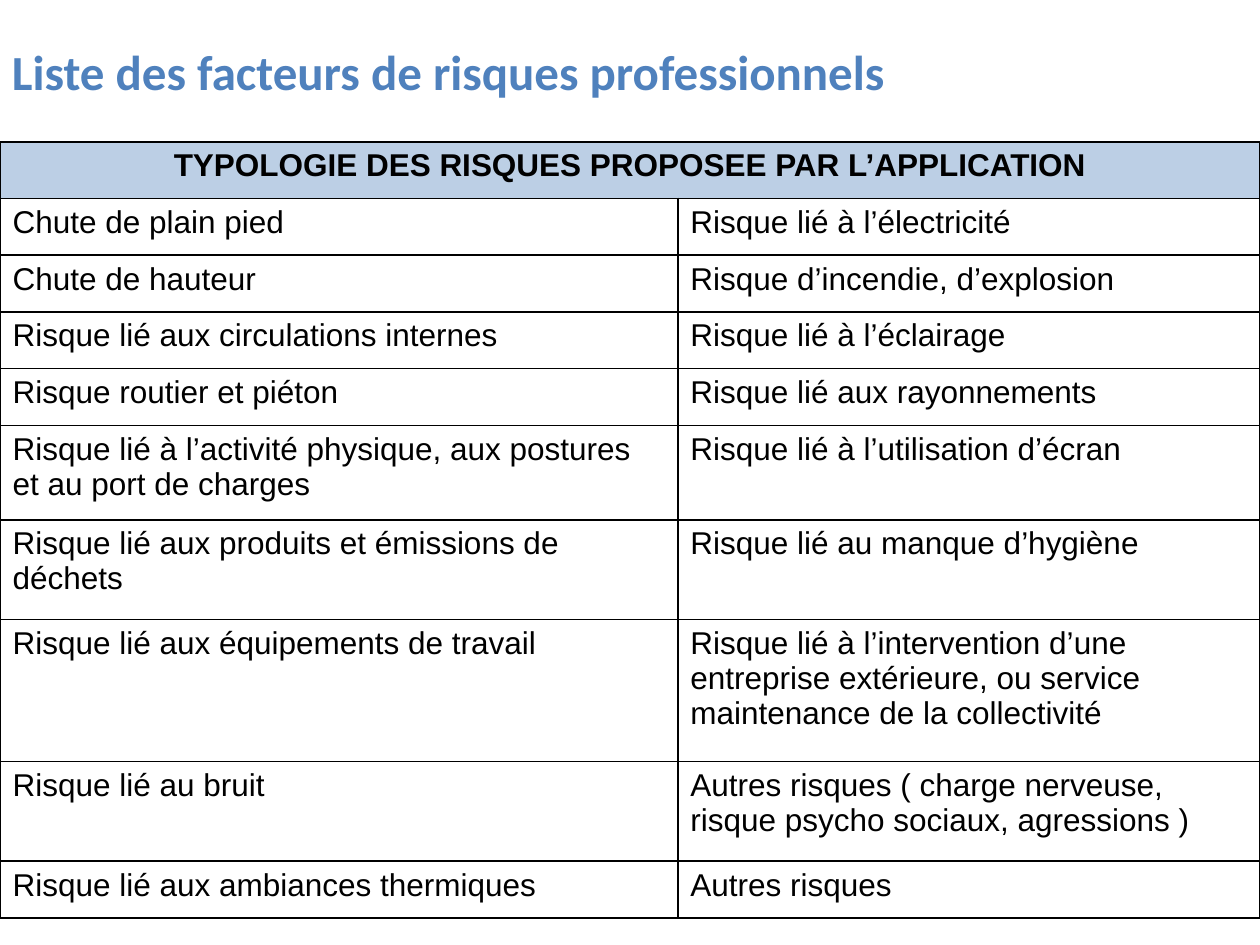
from lxml.etree import SubElement
from pptx import Presentation
from pptx.dml.color import RGBColor
from pptx.enum.text import MSO_ANCHOR, PP_ALIGN
from pptx.oxml.ns import qn
from pptx.util import Inches, Pt

WIDTH, HEIGHT = 10, 7.5
TABLE_TOP = 0.15  # share of the slide height, also the height of the title
BLUE, BLACK, WHITE = "4F81BD", "000000", "FFFFFF"

HEADING = "TYPOLOGIE DES RISQUES PROPOSEE PAR L’APPLICATION"
HEADING_HEIGHT = 0.45
# Left risk, right risk, row height in inches
RISKS = [
    ("Chute de plain pied", "Risque lié à l’électricité", 0.45),
    ("Chute de hauteur", "Risque d’incendie, d’explosion", 0.45),
    ("Risque lié aux circulations internes", "Risque lié à l’éclairage", 0.45),
    ("Risque routier et piéton", "Risque lié aux rayonnements", 0.45),
    ("Risque lié à l’activité physique, aux postures et au port de charges",
     "Risque lié à l’utilisation d’écran", 0.75),
    ("Risque lié aux produits et émissions de déchets",
     "Risque lié au manque d’hygiène", 0.79),
    ("Risque lié aux équipements de travail",
     "Risque lié à l’intervention d’une entreprise extérieure, "
     "ou service maintenance de la collectivité", 1.13),
    ("Risque lié au bruit",
     "Autres risques ( charge nerveuse, risque psycho sociaux, agressions )", 0.79),
    ("Risque lié aux ambiances thermiques", "Autres risques", 0.45),
]


def color(value):
    return RGBColor.from_string(value)


class SlideBuilder:
    def __init__(self, presentation):
        self.slide = presentation.slides.add_slide(presentation.slide_layouts[5])
        self.width = presentation.slide_width
        self.height = presentation.slide_height

    def box(self, left, top, width, height):
        """Turn shares of the slide's size into lengths."""
        return (int(left * self.width), int(top * self.height),
                int(width * self.width), int(height * self.height))

    def add_text(self, frame, text, size, font, value, bold=False, align=PP_ALIGN.LEFT):
        paragraph = frame.paragraphs[0]
        paragraph.alignment = align
        run = paragraph.add_run()
        run.text = text
        run.font.size = Pt(size)
        run.font.name = font
        run.font.bold = bold
        run.font.color.rgb = color(value)

    def title(self, text, *shares):
        shape = self.slide.shapes.title
        shape.left, shape.top, shape.width, shape.height = self.box(*shares)
        shape.text_frame.vertical_anchor = MSO_ANCHOR.MIDDLE
        self.add_text(shape.text_frame, text, 28, "Calibri", BLUE, True, PP_ALIGN.CENTER)

    def style_cell(self, cell, fill, opacity=None):
        properties = cell._tc.get_or_add_tcPr()
        for side in ("a:lnL", "a:lnR", "a:lnT", "a:lnB"):
            line = SubElement(properties, qn(side), w=str(Pt(1)))
            solid = SubElement(line, qn("a:solidFill"))
            SubElement(solid, qn("a:srgbClr"), val=BLACK)
        cell.fill.solid()
        cell.fill.fore_color.rgb = color(fill)
        if opacity is not None:
            tint = properties.find(qn("a:solidFill")).find(qn("a:srgbClr"))
            SubElement(tint, qn("a:alpha"), val=str(opacity * 1000))

    def risk_table(self, heading, risks, column_shares, top):
        heights = [HEADING_HEIGHT] + [height for _, _, height in risks]
        frame = self.slide.shapes.add_table(
            len(heights), len(column_shares),
            *self.box(0, top, 1, sum(heights) / HEIGHT))
        table = frame.table
        table.first_row = table.horz_banding = False
        for column, share in zip(table.columns, column_shares):
            column.width = int(share * self.width)
        for row, height in zip(table.rows, heights):
            row.height = Inches(height)

        # Heading across both columns
        table.cell(0, 0).merge(table.cell(0, 1))
        for cell in table.rows[0].cells:
            self.style_cell(cell, BLUE, 38)
        self.add_text(table.cell(0, 0).text_frame, heading, 18, "Arial", BLACK,
                      True, PP_ALIGN.CENTER)

        # Risks
        for row, (left, right, _) in enumerate(risks, 1):
            for cell, text in zip(table.rows[row].cells, (left, right)):
                self.style_cell(cell, WHITE)
                self.add_text(cell.text_frame, text, 18, "Arial", BLACK)


def main():
    presentation = Presentation()
    presentation.slide_width = Inches(WIDTH)
    presentation.slide_height = Inches(HEIGHT)
    builder = SlideBuilder(presentation)
    builder.title("Liste des facteurs de risques professionnels ",
                  -0.09, 0, 0.9, TABLE_TOP)
    builder.risk_table(HEADING, RISKS, (0.538, 0.462), TABLE_TOP)
    presentation.save("out.pptx")


if __name__ == "__main__":
    main()
